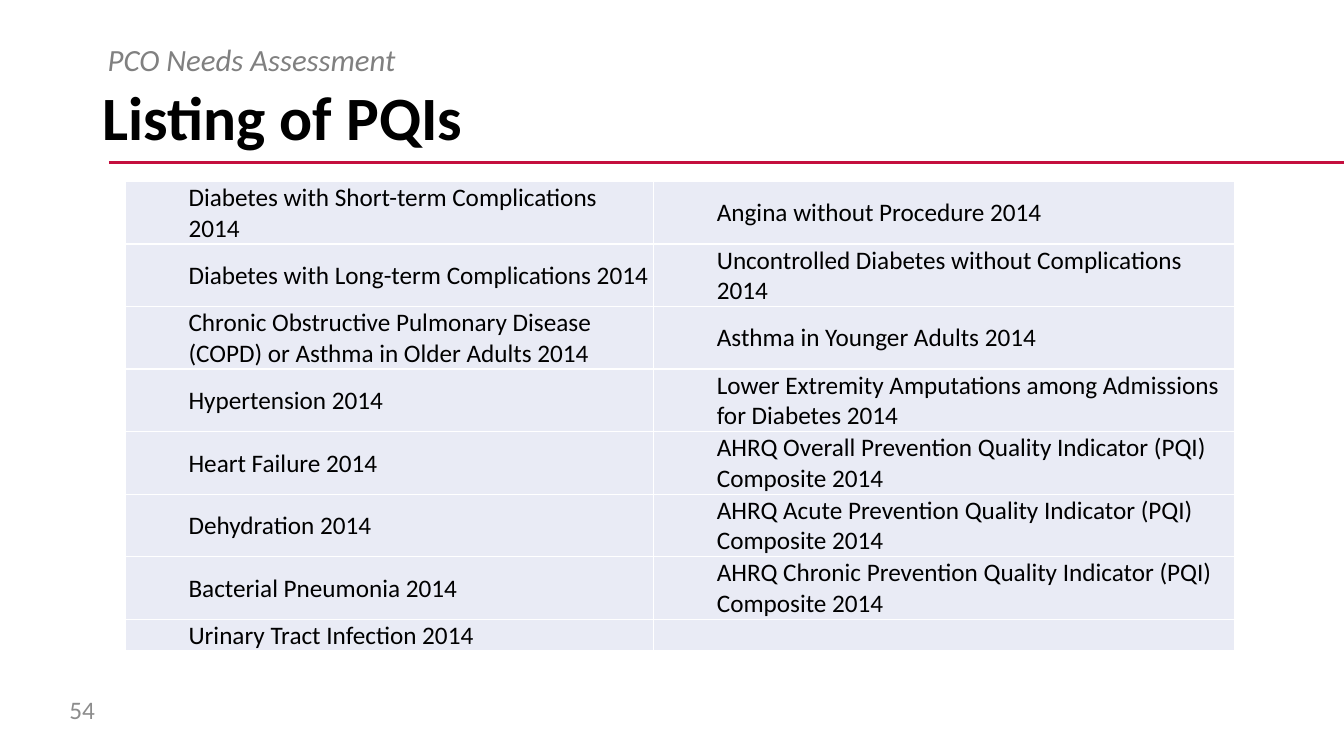
from dataclasses import dataclass

from lxml.etree import SubElement
from pptx import Presentation
from pptx.dml.color import RGBColor
from pptx.enum.text import MSO_ANCHOR as Anchor
from pptx.oxml.ns import qn
from pptx.util import Inches, Pt


@dataclass
class Label:
    text: str
    box: tuple[float, float, float, float]
    size: int
    color: str
    bold: bool = False
    italic: bool = False
    anchor: Anchor = Anchor.MIDDLE
    spacing: float = 0.9


LABELS = [
    Label("Listing of PQIs", (0.92, 0.65, 11.5, 1.09), 44, "000000", bold=True),
    Label("54", (0.59, 6.84, 0.59, 0.4), 18, "8C8C8C", spacing=1),
    Label("PCO Needs Assessment", (0.97, 0.4, 11.45, 0.38), 22, "808080",
          italic=True, anchor=Anchor.TOP),
]

PQIS = [
    ("Diabetes with Short-term Complications 2014", "Angina without Procedure 2014"),
    ("Diabetes with Long-term Complications 2014",
     "Uncontrolled Diabetes without Complications 2014"),
    ("Chronic Obstructive Pulmonary Disease (COPD) or Asthma in Older Adults 2014",
     "Asthma in Younger Adults 2014"),
    ("Hypertension 2014",
     "Lower Extremity Amputations among Admissions for Diabetes 2014"),
    ("Heart Failure 2014",
     "AHRQ Overall Prevention Quality Indicator (PQI) Composite 2014"),
    ("Dehydration 2014",
     "AHRQ Acute Prevention Quality Indicator (PQI) Composite 2014"),
    ("Bacterial Pneumonia 2014",
     "AHRQ Chronic Prevention Quality Indicator (PQI) Composite 2014"),
    ("Urinary Tract Infection 2014", ""),
]
COLUMNS = (5.24, 5.77)
TALL, SHORT = 0.61, 0.3


def rgb(color: str) -> RGBColor:
    return RGBColor.from_string(color)


def style(para, size: int, color: str, bold: bool = False, italic: bool = False) -> None:
    font = para.font
    font.name, font.size = "Calibri", Pt(size)
    font.bold, font.italic = bold, italic
    font.color.rgb = rgb(color)


def add_label(slide, label: Label) -> None:
    frame = slide.shapes.add_textbox(*map(Inches, label.box)).text_frame
    frame.word_wrap = True
    frame.vertical_anchor = label.anchor
    para = frame.paragraphs[0]
    para.text = label.text
    para.line_spacing = label.spacing
    style(para, label.size, label.color, label.bold, label.italic)


def add_rule(slide) -> None:
    y = Inches(1.61)
    rule = slide.shapes.add_connector(1, Inches(1.08), y, Inches(13.33), y)
    rule.line.color.rgb = rgb("C40E3E")
    rule.line.width = Pt(2.25)
    SubElement(rule._element.spPr, qn("a:effectLst"))


def add_borders(cell, color: str, width: float) -> None:
    props = cell._tc.get_or_add_tcPr()
    for side in ("lnL", "lnR", "lnT", "lnB"):
        line = SubElement(props, qn(f"a:{side}"), w=str(Pt(width)))
        fill = SubElement(line, qn("a:solidFill"))
        SubElement(fill, qn("a:srgbClr"), val=color)


def fill_cell(cell, text: str) -> None:
    add_borders(cell, "FFFFFF", 1)
    cell.fill.solid()
    cell.fill.fore_color.rgb = rgb("E9EBF5")
    cell.vertical_anchor = Anchor.MIDDLE
    cell.margin_left = Inches(0.63)
    cell.margin_right = cell.margin_top = Inches(0.01)
    cell.margin_bottom = 0
    para = cell.text_frame.paragraphs[0]
    para.text = text
    style(para, 18, "000000")


def add_grid(slide) -> None:
    heights = [TALL] * (len(PQIS) - 1) + [SHORT]
    table = slide.shapes.add_table(
        len(PQIS), len(COLUMNS), Inches(1.24), Inches(1.8),
        Inches(sum(COLUMNS)), Inches(sum(heights))).table
    table.first_row = table.horz_banding = False
    for col, width in zip(table.columns, COLUMNS):
        col.width = Inches(width)
    for row, height, texts in zip(table.rows, heights, PQIS):
        row.height = Inches(height)
        for cell, text in zip(row.cells, texts):
            fill_cell(cell, text)


def main() -> None:
    deck = Presentation()
    deck.slide_width, deck.slide_height = Inches(13.33), Inches(7.5)
    slide = deck.slides.add_slide(deck.slide_layouts[6])
    add_rule(slide)
    add_grid(slide)
    for label in LABELS:
        add_label(slide, label)
    deck.save("out.pptx")


if __name__ == "__main__":
    main()
